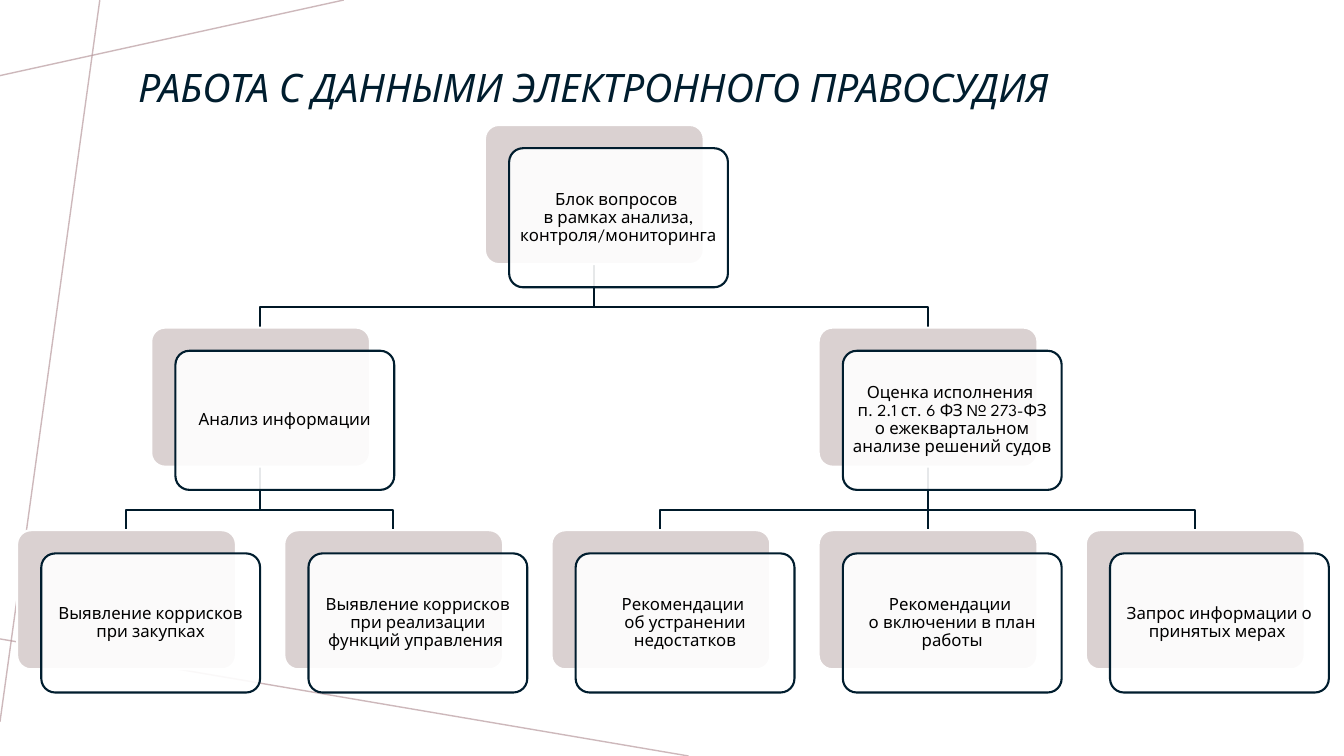
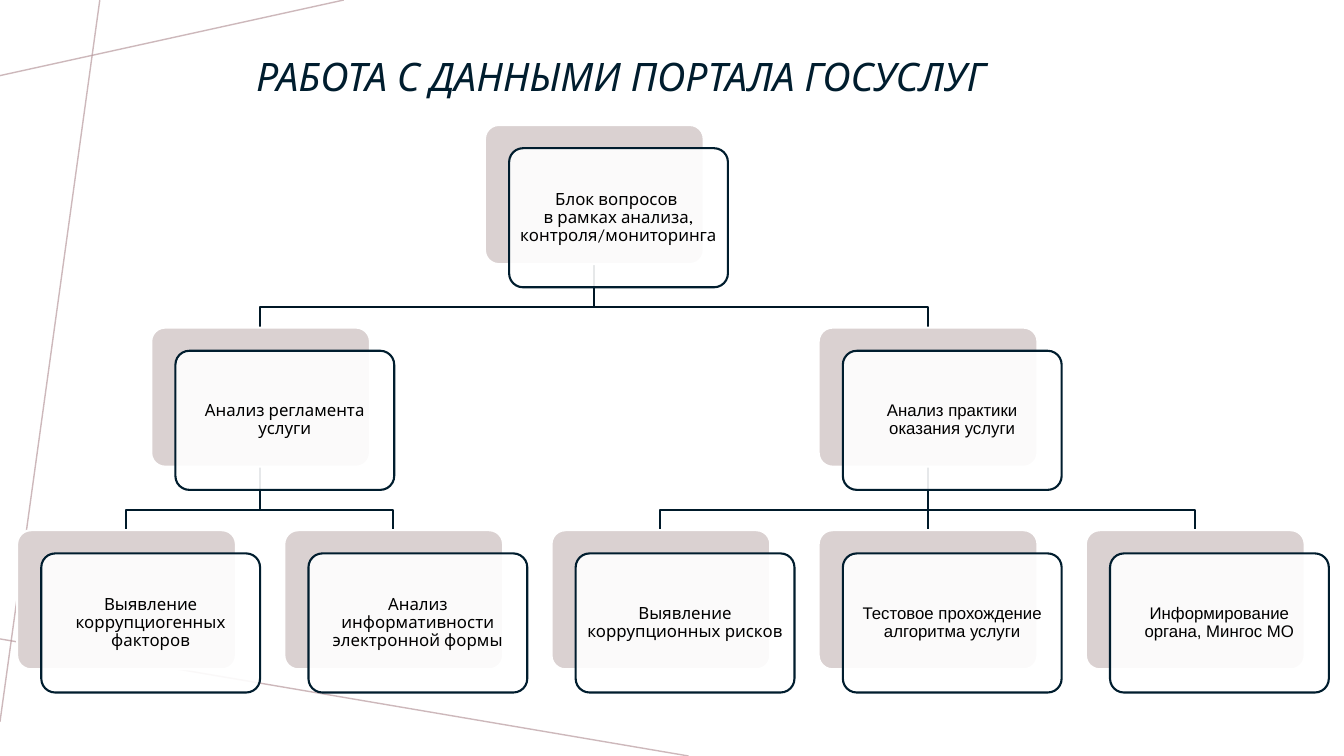
from dataclasses import dataclass

from lxml.etree import SubElement
from pptx import Presentation
from pptx.dml.color import RGBColor
from pptx.enum.shapes import MSO_CONNECTOR, MSO_SHAPE
from pptx.enum.text import MSO_ANCHOR, MSO_AUTO_SIZE, PP_ALIGN
from pptx.oxml.ns import qn
from pptx.util import Pt

EMU_PER_PX = 9144
SLIDE_SIZE = (1333, 750)

CARD_WIDTH, CARD_HEIGHT = 217, 138
FIRST_LEFT, COLUMN_STEP = 17, 265
FIRST_TOP, LEVEL_STEP = 124, 201
FRONT_SHIFT_X, FRONT_SHIFT_Y = 24, 23
ELBOW_DROP = 43
TEXT_INSET = 5

BACKGROUND_LINES = [
    ((341, 0), (0, 75)),
    ((683, 750), (-5, 633)),
    ((99, 0), (0, 716)),
]


@dataclass(frozen=True)
class Theme:
    font: str = "League Spartan"
    plain_font: str = "Arial"
    title_size: int = 28
    card_size: int = 12
    line_spacing: float = 0.9
    title: str = "001D2E"
    card_text: str = "000000"
    card_back: str = "DAD1D1"
    card_front: str = "FFFFFF"
    card_front_opacity: int = 90
    card_border: str = "001D2E"
    branch_lines: tuple = ("001725", "001A2A")
    branch_width: float = 1.5
    background_line: str = "B99B9F"
    background_line_width: float = 1
    background_line_opacity: int = 70


THEME = Theme()


@dataclass
class Node:
    text: str
    children: tuple = ()
    font: str = THEME.font
    column: float = 0
    level: int = 0

    @property
    def left(self):
        return round(FIRST_LEFT + self.column * COLUMN_STEP)

    @property
    def top(self):
        return FIRST_TOP + self.level * LEVEL_STEP

    @property
    def center(self):
        return self.left + CARD_WIDTH // 2


ROOT_TEXT = "Блок вопросов \nв рамках анализа, контроля/мониторинга"

COURT_TREE = Node(ROOT_TEXT, (
    Node("Анализ информации", (
        Node("Выявление коррисков при закупках"),
        Node("Выявление коррисков при реализации функций управления "),
    )),
    Node("Оценка исполнения \nп. 2.1 ст. 6 ФЗ № 273-ФЗ о ежеквартальном анализе решений судов ", (
        Node("Рекомендации \nоб устранении недостатков"),
        Node("Рекомендации \nо включении в план работы"),
        Node("Запрос информации о принятых мерах "),
    )),
))

SERVICES_TREE = Node(ROOT_TEXT, (
    Node("Анализ регламента услуги", (
        Node("Выявление коррупциогенных факторов"),
        Node("Анализ информативности электронной формы"),
    )),
    Node("Анализ практики оказания услуги", (
        Node("Выявление коррупционных рисков"),
        Node("Тестовое прохождение алгоритма услуги", font=THEME.plain_font),
        Node("Информирование органа, Мингос МО", font=THEME.plain_font),
    ), THEME.plain_font),
))

SLIDES = [
    ("РАБОТА С ДАННЫМИ ЭЛЕКТРОННОГО ПРАВОСУДИЯ", (127, 64, 1095, 51), COURT_TREE),
    ("РАБОТА С ДАННЫМИ ПОРТАЛА ГОСУСЛУГ", (244, 54, 847, 50), SERVICES_TREE),
]


def px(*lengths):
    return [round(length * EMU_PER_PX) for length in lengths]


def set_opacity(shape, percent):
    """Apply opacity to the first colour of the shape: its fill, or else its line."""
    color = next(shape.element.spPr.iter(qn("a:srgbClr")))
    SubElement(color, qn("a:alpha"), val=str(percent * 1000))


def set_line(shape, color, width):
    shape.line.color.rgb = RGBColor.from_string(color)
    shape.line.width = Pt(width)


def style_text(paragraph, font, size, color, alignment, italic=False):
    paragraph.alignment = alignment
    paragraph.line_spacing = THEME.line_spacing
    paragraph.font.name = font
    paragraph.font.size = Pt(size)
    paragraph.font.italic = italic
    paragraph.font.color.rgb = RGBColor.from_string(color)


def add_line(slide, start, end, color, width):
    line = slide.shapes.add_connector(MSO_CONNECTOR.STRAIGHT, *px(*start, *end))
    set_line(line, color, width)
    SubElement(line.element.spPr, qn("a:effectLst"))
    return line


def move_background_to_master(slide, master):
    """Draw the thin lines once and keep them on the master."""
    for start, end in BACKGROUND_LINES:
        line = add_line(slide, start, end, THEME.background_line, THEME.background_line_width)
        set_opacity(line, THEME.background_line_opacity)
        master.shapes.element.append(line.element)


def set_title(slide, text, bounds):
    title = slide.shapes.title
    title.left, title.top, title.width, title.height = px(*bounds)
    frame = title.text_frame
    frame.text = text
    frame.auto_size = MSO_AUTO_SIZE.NONE
    frame.vertical_anchor = MSO_ANCHOR.BOTTOM
    style_text(frame.paragraphs[0], THEME.font, THEME.title_size, THEME.title,
               PP_ALIGN.LEFT, italic=True)


def place(node, level=0, first_column=0):
    """Give leaves successive columns, centre parents; return the next free column."""
    node.level = level
    next_column = first_column
    for child in node.children:
        next_column = place(child, level + 1, next_column)
    if not node.children:
        node.column = first_column
        return first_column + 1
    node.column = (node.children[0].column + node.children[-1].column) / 2
    return next_column


def walk(node):
    yield node
    for child in node.children:
        yield from walk(child)


def add_branch(slide, parent, child):
    color = THEME.branch_lines[parent.level]
    start = (parent.center, parent.top + CARD_HEIGHT)
    end = (child.center, child.top)
    if parent.center == child.center:
        add_line(slide, start, end, color, THEME.branch_width)
        return
    elbow = start[1] + ELBOW_DROP
    builder = slide.shapes.build_freeform(*start, scale=EMU_PER_PX)
    builder.add_line_segments([(start[0], elbow), (end[0], elbow), end], close=False)
    branch = builder.convert_to_shape()
    branch.shadow.inherit = False
    branch.fill.background()
    set_line(branch, color, THEME.branch_width)


def add_panel(slide, left, top, fill, border):
    panel = slide.shapes.add_shape(
        MSO_SHAPE.ROUNDED_RECTANGLE, *px(left, top, CARD_WIDTH, CARD_HEIGHT))
    panel.adjustments[0] = 0.1
    panel.shadow.inherit = False
    panel.fill.solid()
    panel.fill.fore_color.rgb = RGBColor.from_string(fill)
    set_line(panel, border, THEME.branch_width)
    return panel


def add_card(slide, node):
    add_panel(slide, node.left, node.top, THEME.card_back, THEME.card_front)
    front = add_panel(slide, node.left + FRONT_SHIFT_X, node.top + FRONT_SHIFT_Y,
                      THEME.card_front, THEME.card_border)
    set_opacity(front, THEME.card_front_opacity)
    frame = front.text_frame
    frame.word_wrap = True
    frame.vertical_anchor = MSO_ANCHOR.MIDDLE
    inset, = px(TEXT_INSET)
    frame.margin_left = frame.margin_right = inset
    frame.margin_top = frame.margin_bottom = inset
    paragraph = frame.paragraphs[0]
    paragraph.text = node.text
    style_text(paragraph, node.font, THEME.card_size, THEME.card_text, PP_ALIGN.CENTER)


def add_tree(slide, root):
    place(root)
    nodes = list(walk(root))
    for parent in nodes:
        for child in parent.children:
            add_branch(slide, parent, child)
    for node in nodes:
        add_card(slide, node)


def main():
    deck = Presentation()
    deck.slide_width, deck.slide_height = px(*SLIDE_SIZE)
    title_only = deck.slide_layouts[5]
    for title, title_bounds, tree in SLIDES:
        slide = deck.slides.add_slide(title_only)
        set_title(slide, title, title_bounds)
        add_tree(slide, tree)
    move_background_to_master(deck.slides[0], deck.slide_master)
    deck.save("out.pptx")


if __name__ == "__main__":
    main()
